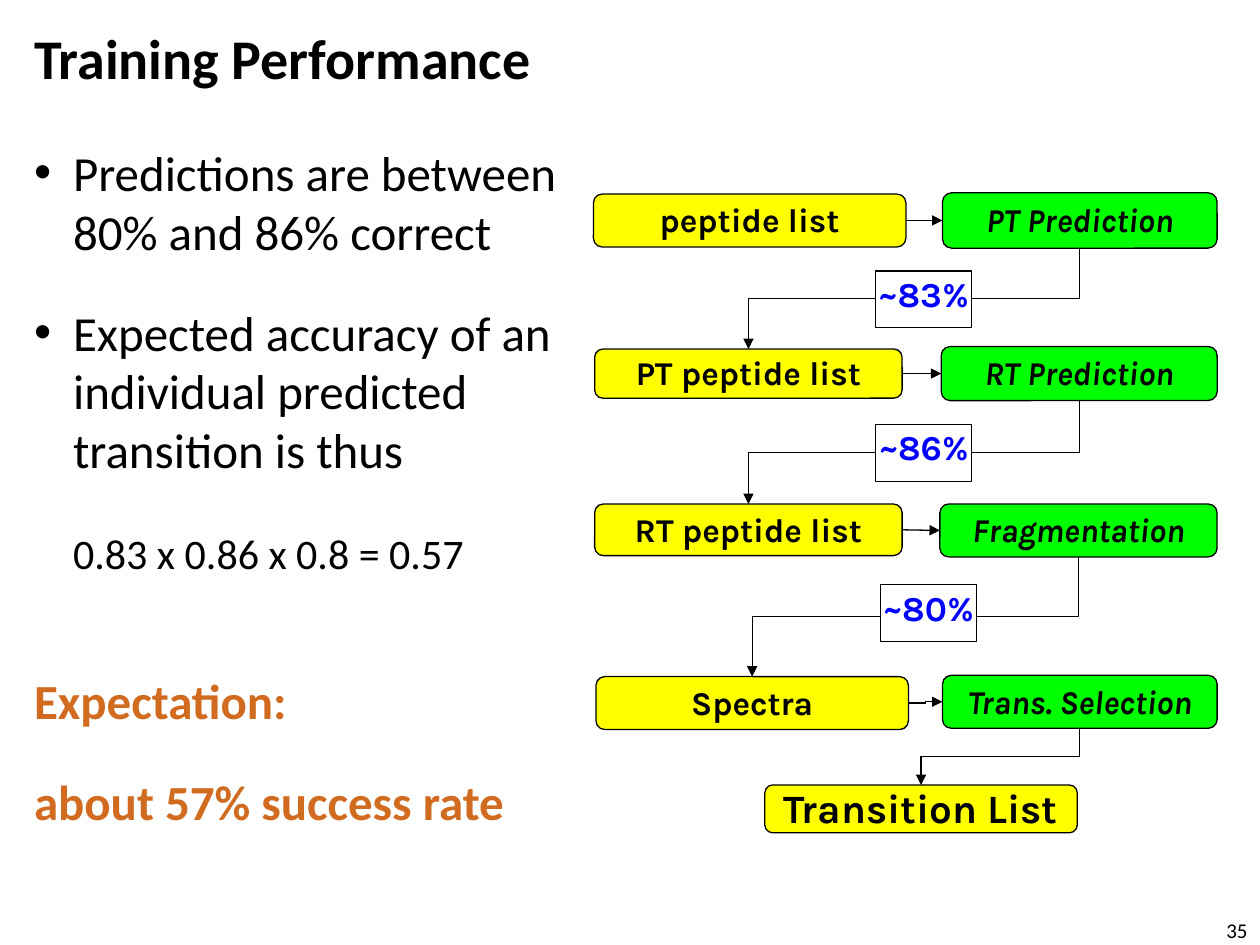
from pptx import Presentation
from pptx.dml.color import RGBColor
from pptx.enum.shapes import MSO_CONNECTOR as Link, MSO_SHAPE as Shape
from pptx.enum.text import MSO_ANCHOR as Anchor, MSO_AUTO_SIZE as AutoSize, PP_ALIGN as Align
from pptx.oxml.ns import qn
from pptx.util import Inches, Pt
from lxml.etree import SubElement

BLACK, WHITE, BLUE, ORANGE = "000000", "FFFFFF", "0000FF", "D06B20"
YELLOW, GREEN = "FFFF00", "00FF00"

# Content: text, bulleted, size, colour, bold, space before, space after
TITLE = "Training Performance"
BODY = [
    ("Predictions are between 80% and 86% correct", True, 28, BLACK, False, 0, 24),
    ("Expected accuracy of an individual predicted transition is thus",
     True, 28, BLACK, False, 0, 24),
    ("0.83 x 0.86 x 0.8 = 0.57", False, 24, BLACK, False, 4, 53),
    ("Expectation:", False, 28, ORANGE, True, 0, 24),
    ("about 57% success rate", False, 28, ORANGE, True, 0, 24),
]
# Each step: list and its frame, prediction and its frame, link between them
STEPS = [
    ("peptide list", (4.71, 1.54, 2.48, 0.42),
     "PT Prediction", (7.48, 1.53, 2.18, 0.44), Link.ELBOW),
    ("PT peptide list", (4.72, 2.77, 2.44, 0.39),
     "RT Prediction", (7.47, 2.75, 2.19, 0.43), Link.ELBOW),
    ("RT peptide list", (4.72, 4, 2.44, 0.41),
     "Fragmentation", (7.46, 4, 2.2, 0.42), Link.STRAIGHT),
    ("Spectra", (4.73, 5.37, 2.48, 0.42),
     "Trans. Selection", (7.48, 5.36, 2.18, 0.42), Link.ELBOW),
]
RESULT = ("Transition List", (6.07, 6.23, 2.48, 0.38))
RATES = [("~83%", 6.95, 2.15), ("~86%", 6.95, 3.37), ("~80%", 6.99, 4.64)]
PAGE_NUMBER = "35"


def color(value):
    return RGBColor.from_string(value)


def set_font(para, name, size, value=BLACK, bold=False, italic=False):
    font = para.font
    font.name, font.size, font.bold, font.italic = name, Pt(size), bold, italic
    font.color.rgb = color(value)


def place(shape, *frame):
    shape.left, shape.top, shape.width, shape.height = map(Inches, frame)


def add_box(page, kind, frame, fill, text, size, text_color=BLACK, italic=False,
            align=Align.CENTER, anchor=Anchor.MIDDLE, insets=(0, 0.01, 0, 0)):
    box = page.shapes.add_shape(kind, *map(Inches, frame))
    box.shadow.inherit = False
    box.fill.solid()
    box.fill.fore_color.rgb = color(fill)
    box.line.color.rgb = color(BLACK)
    box.line.width = Pt(0.75)
    words = box.text_frame
    words.word_wrap = False
    words.vertical_anchor = anchor
    words.margin_left, words.margin_top, words.margin_right, words.margin_bottom = map(
        Inches, insets)
    para = words.paragraphs[0]
    para.text, para.alignment, para.line_spacing = text, align, 0.97
    set_font(para, "Karla", size, text_color, True, italic)


def add_arrow(page, kind, start, end):
    arrow = page.shapes.add_connector(kind, *map(Inches, start + end))
    arrow.line.color.rgb = color(BLACK)
    arrow.line.width = Pt(0.75)
    SubElement(arrow.line._get_or_add_ln(), qn("a:tailEnd"), type="triangle")
    SubElement(arrow._element.spPr, qn("a:effectLst"))
    return arrow


def add_drop(page, source, target):
    """Arrow from the bottom of one frame, down and left, to the top of another."""
    x1, y1 = source[0] + source[2] / 2, source[1] + source[3]
    x2, y2 = target[0] + target[2] / 2, target[1]
    arrow = add_arrow(page, Link.ELBOW, (x2, y1), (x1, y2))
    width, height = y2 - y1, x1 - x2
    # A quarter turn swaps width and height about the centre
    place(arrow, (x1 + x2 - width) / 2, (y1 + y2 - height) / 2, width, height)
    arrow._element.spPr.find(qn("a:xfrm")).set("rot", "5400000")


def add_flow(page):
    # Boxes and the arrows across each step
    for name, left, prediction, right, kind in STEPS:
        add_box(page, Shape.ROUNDED_RECTANGLE, left, YELLOW, name, 19)
        add_box(page, Shape.ROUNDED_RECTANGLE, right, GREEN, prediction, 19, italic=True)
        add_arrow(page, kind, (left[0] + left[2], left[1] + left[3] / 2),
                  (right[0], right[1] + right[3] / 2))
    result, result_frame = RESULT
    add_box(page, Shape.ROUNDED_RECTANGLE, result_frame, YELLOW, result, 23)

    # Arrows down to the next step
    targets = [step[1] for step in STEPS[1:]] + [result_frame]
    for step, target in zip(STEPS, targets):
        add_drop(page, step[3], target)

    # Success rates on those arrows
    for rate, left, top in RATES:
        add_box(page, Shape.RECTANGLE, (left, top, 0.76, 0.45), WHITE, rate, 20, BLUE,
                align=Align.RIGHT, anchor=Anchor.TOP, insets=(0.02, 0.03, 0.02, 0.02))


def add_texts(page):
    # Title
    title = page.shapes.title
    place(title, 0.17, 0.08, 7.33, 0.75)
    title.text_frame.auto_size = AutoSize.NONE
    title.text_frame.vertical_anchor = Anchor.MIDDLE
    para = title.text_frame.paragraphs[0]
    para.text, para.alignment = TITLE, Align.LEFT
    set_font(para, "Calibri", 32, bold=True)

    # Body
    body = page.placeholders[1]
    place(body, 0.17, 1.08, 4.59, 5.92)
    words = body.text_frame
    words.auto_size = AutoSize.NONE
    for index, (text, bulleted, size, value, bold, before, after) in enumerate(BODY):
        para = words.add_paragraph() if index else words.paragraphs[0]
        para.text = text
        para.space_before, para.space_after = Pt(before), Pt(after)
        props = para._p.get_or_add_pPr()
        indented = value == BLACK
        props.set("marL", str(Inches(0.31 if indented else 0)))
        props.set("indent", str(Inches(-0.31 if bulleted else 0)))
        if bulleted:
            SubElement(props, qn("a:buFont"), typeface="Arial")
            SubElement(props, qn("a:buChar"), char="•")
        else:
            SubElement(props, qn("a:buNone"))
        set_font(para, "Calibri", size, value, bold)

    # Page number
    box = page.shapes.add_textbox(*map(Inches, (7.5, 7.27, 2.5, 0.23)))
    box.text_frame.word_wrap = True
    box.text_frame.vertical_anchor = Anchor.MIDDLE
    para = box.text_frame.paragraphs[0]
    para.text, para.alignment = PAGE_NUMBER, Align.RIGHT
    set_font(para, "Calibri", 12)


def main():
    deck = Presentation()
    deck.slide_width, deck.slide_height = Inches(10), Inches(7.5)
    page = deck.slides.add_slide(deck.slide_layouts[1])
    add_flow(page)
    add_texts(page)
    deck.save("out.pptx")


if __name__ == "__main__":
    main()
